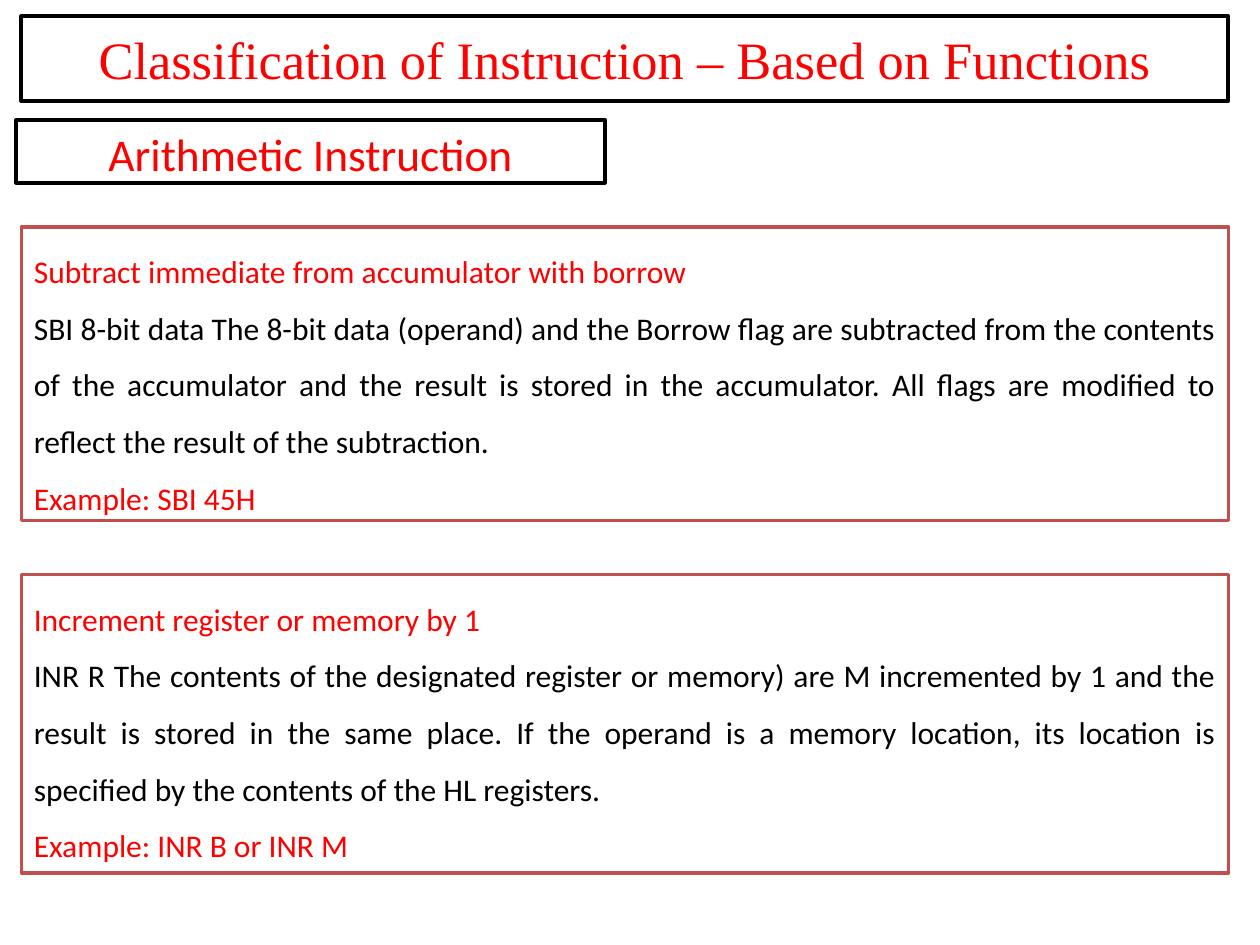
"""Build a slide on arithmetic instructions grouped by function."""
from pptx import Presentation
from pptx.dml.color import RGBColor
from pptx.enum.shapes import MSO_SHAPE as Shape
from pptx.enum.text import MSO_ANCHOR as Anchor, MSO_AUTO_SIZE as Fit, PP_ALIGN as Align
from pptx.util import Inches, Pt

RED = RGBColor(0xFF, 0x00, 0x00)
BLACK = RGBColor(0x00, 0x00, 0x00)
WHITE = RGBColor(0xFF, 0xFF, 0xFF)
BRICK = RGBColor(0xC0, 0x50, 0x4D)


def add_box(left, top, width, height, line, weight, fill=None):
    box = slide.shapes.add_shape(
        Shape.RECTANGLE, Inches(left), Inches(top), Inches(width), Inches(height))
    box.shadow.inherit = False
    if fill is None:
        box.fill.background()
    else:
        box.fill.solid()
        box.fill.fore_color.rgb = fill
    box.line.color.rgb = line
    box.line.width = Pt(weight)
    frame = box.text_frame
    frame.word_wrap = True
    frame.vertical_anchor = Anchor.TOP
    return frame


def write(para, text, size=18, font="Calibri", color=RED, align=Align.CENTER, space=None):
    para.alignment = align
    para.line_spacing = space
    run = para.add_run()
    run.text = text
    run.font.size = Pt(size)
    run.font.name = font
    run.font.color.rgb = color


deck = Presentation()
deck.slide_width = Inches(10)
deck.slide_height = Inches(7.5)
slide = deck.slides.add_slide(deck.slide_layouts[6])

title = add_box(0.17, 0.13, 9.58, 0.67, BLACK, 2.25)
title.vertical_anchor = Anchor.MIDDLE
write(title.paragraphs[0], "Classification of Instruction – Based on Functions",
      size=30, font="Times New Roman")

topic = add_box(0.13, 0.95, 4.67, 0.5, BLACK, 2.25)
write(topic.paragraphs[0], "Arithmetic Instruction", size=25.9)

cards = [
    (1.8, 2.33,
     "Subtract immediate from accumulator with borrow",
     "SBI 8-bit data The 8-bit data (operand) and the Borrow flag are subtracted "
     "from the contents of the accumulator and the result is stored in the "
     "accumulator. All flags are modified to reflect the result of the subtraction.",
     "Example: SBI 45H"),
    (4.56, 2.37,
     "Increment register or memory by 1",
     "INR R The contents of the designated register or memory) are M incremented "
     "by 1 and the result is stored in the same place. If the operand is a memory "
     "location, its location is specified by the contents of the HL registers.",
     "Example: INR B or INR M"),
]
for top, height, *lines in cards:
    card = add_box(0.17, top, 9.58, height, BRICK, 2, fill=WHITE)
    card.auto_size = Fit.SHAPE_TO_FIT_TEXT
    for row, (text, color) in enumerate(zip(lines, (RED, BLACK, RED))):
        para = card.add_paragraph() if row else card.paragraphs[0]
        write(para, text, color=color, align=Align.JUSTIFY, space=1.5)

deck.save("out.pptx")
